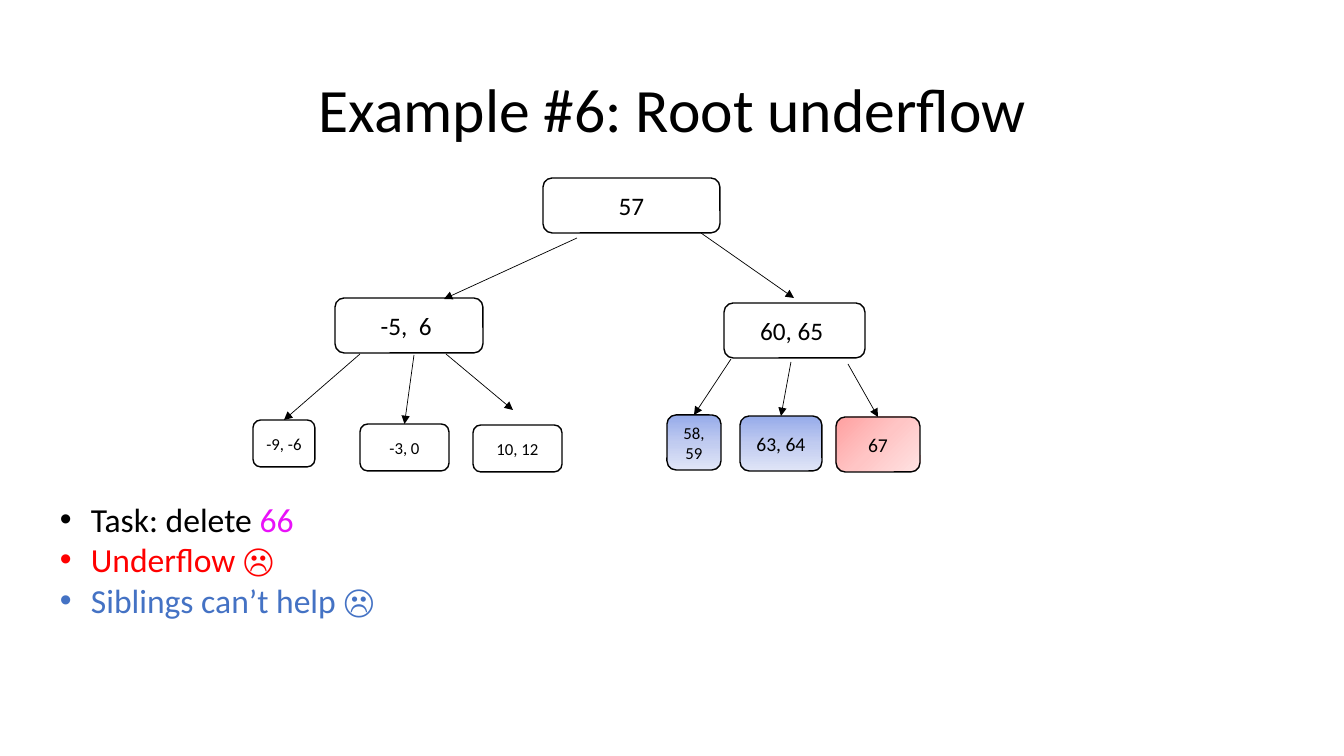
"""Build the slide on root underflow in a search tree of multi-key nodes."""
from copy import deepcopy

from lxml import etree
from pptx import Presentation, util as u
from pptx.dml.color import RGBColor
from pptx.enum import shapes, text
from pptx.oxml import ns

TITLE = ("Example #6: Root underflow", (93, 40, 1159, 146))

NODES = {
    "root": ("57", (543, 178, 177, 55), 18, None),
    "left": ("-5,  6 ", (335, 298, 148, 55), 18, None),
    "right": ("60, 65 ", (724, 303, 141, 55), 18, None),
    "left 1": ("-9, -6", (253, 420, 62, 47), 12, None),
    "left 2": ("-3, 0", (360, 424, 89, 47), 12, None),
    "left 3": ("10, 12", (473, 425, 89, 47), 12, None),
    "right 1": ("58, 59", (667, 415, 54, 55), 12, "sibling"),
    "right 2": ("63, 64", (740, 416, 82, 55), 14, "sibling"),
    "right 3": ("67", (836, 417, 84, 55), 14, "underflow"),
}

EDGES = [
    ((577, 238), (444, 299)),
    ((701, 233), (794, 298)),
    ((360, 354), "left 1"),
    ((414, 355), "left 2"),
    ((446, 354), (513, 410)),
    ((731, 359), "right 1"),
    ((791, 362), "right 2"),
    ((848, 364), "right 3"),
]

STEPS_AREA = (50, 494, 1210, 132)
STEPS = [
    [("Task: delete ", "ink"), ("66", "key")],
    [("Underflow ☹", "alert")],
    [("Siblings can’t help ☹", "note")],
]

THEME = {
    "font": "Calibri", "title": 44, "step": 24, "node line": 1, "edge line": 0.5,
    "ink": "000000", "key": "E911F9", "alert": "FF0000", "note": "4472C4",
    "sibling": (270, ["96ABEA", "C0CBF0", "E0E5F7"]),
    "underflow": (315, ["FFA0A0", "FFC5C5", "FFE3E3"]),
}
PX = 914400 / 100.8


def emu(*lengths):
    return [u.Emu(round(length * PX)) for length in lengths]


def rgb(name):
    return RGBColor.from_string(THEME[name])


def add_run(paragraph, words, size, color="ink"):
    run = paragraph.add_run()
    run.text = words
    run.font.name = THEME["font"]
    run.font.size = u.Pt(size)
    run.font.color.rgb = rgb(color)


def fill_gradient(node, angle, colors):
    node.fill.gradient()
    stops = node._element.spPr.find(".//" + ns.qn("a:gsLst"))
    stops.append(deepcopy(stops[-1]))
    for i, (stop, color) in enumerate(zip(node.fill.gradient_stops, colors)):
        stop.position = i / (len(colors) - 1)
        stop.color.rgb = RGBColor.from_string(color)
    node.fill.gradient_angle = angle


def add_node(slide, keys, area, size, state):
    node = slide.shapes.add_shape(shapes.MSO_SHAPE.ROUNDED_RECTANGLE, *emu(*area))
    node.shadow.inherit = False
    node.line.color.rgb = rgb("ink")
    node.line.width = u.Pt(THEME["node line"])
    if state:
        fill_gradient(node, *THEME[state])
    else:
        node.fill.background()
    frame = node.text_frame
    frame.word_wrap = True
    frame.vertical_anchor = text.MSO_ANCHOR.MIDDLE
    frame.paragraphs[0].alignment = text.PP_ALIGN.CENTER
    add_run(frame.paragraphs[0], keys, size)
    return node


def add_edge(slide, start, end, nodes):
    tip = start if end in nodes else end
    edge = slide.shapes.add_connector(shapes.MSO_CONNECTOR.STRAIGHT, *emu(*start, *tip))
    if end in nodes:
        edge.end_connect(nodes[end], 0)
    edge.line.color.rgb = rgb("ink")
    edge.line.width = u.Pt(THEME["edge line"])
    etree.SubElement(edge.line._get_or_add_ln(), ns.qn("a:tailEnd"), type="triangle")
    etree.SubElement(edge._element.spPr, ns.qn("a:effectLst"))


def add_frame(slide, area):
    frame = slide.shapes.add_textbox(*emu(*area)).text_frame
    frame.word_wrap = True
    return frame


def add_title(slide, words, area):
    frame = add_frame(slide, area)
    frame.vertical_anchor = text.MSO_ANCHOR.MIDDLE
    heading = frame.paragraphs[0]
    heading.alignment = text.PP_ALIGN.CENTER
    heading.line_spacing = 0.9
    add_run(heading, words, THEME["title"])


def add_steps(slide):
    frame = add_frame(slide, STEPS_AREA)
    indent, = emu(31)
    for i, runs in enumerate(STEPS):
        step = frame.add_paragraph() if i else frame.paragraphs[0]
        props = step._p.get_or_add_pPr()
        props.set("marL", str(indent))
        props.set("indent", str(-indent))
        etree.SubElement(props, ns.qn("a:buFont"), typeface="Arial")
        etree.SubElement(props, ns.qn("a:buChar"), char="•")
        for words, color in runs:
            add_run(step, words, THEME["step"], color)


def main():
    deck = Presentation()
    deck.slide_width, deck.slide_height = emu(1344, 756)
    slide = deck.slides.add_slide(deck.slide_layouts[6])
    add_title(slide, *TITLE)
    nodes = {place: add_node(slide, *node) for place, node in NODES.items()}
    for start, end in EDGES:
        add_edge(slide, start, end, nodes)
    add_steps(slide)
    deck.save("out.pptx")


if __name__ == "__main__":
    main()
